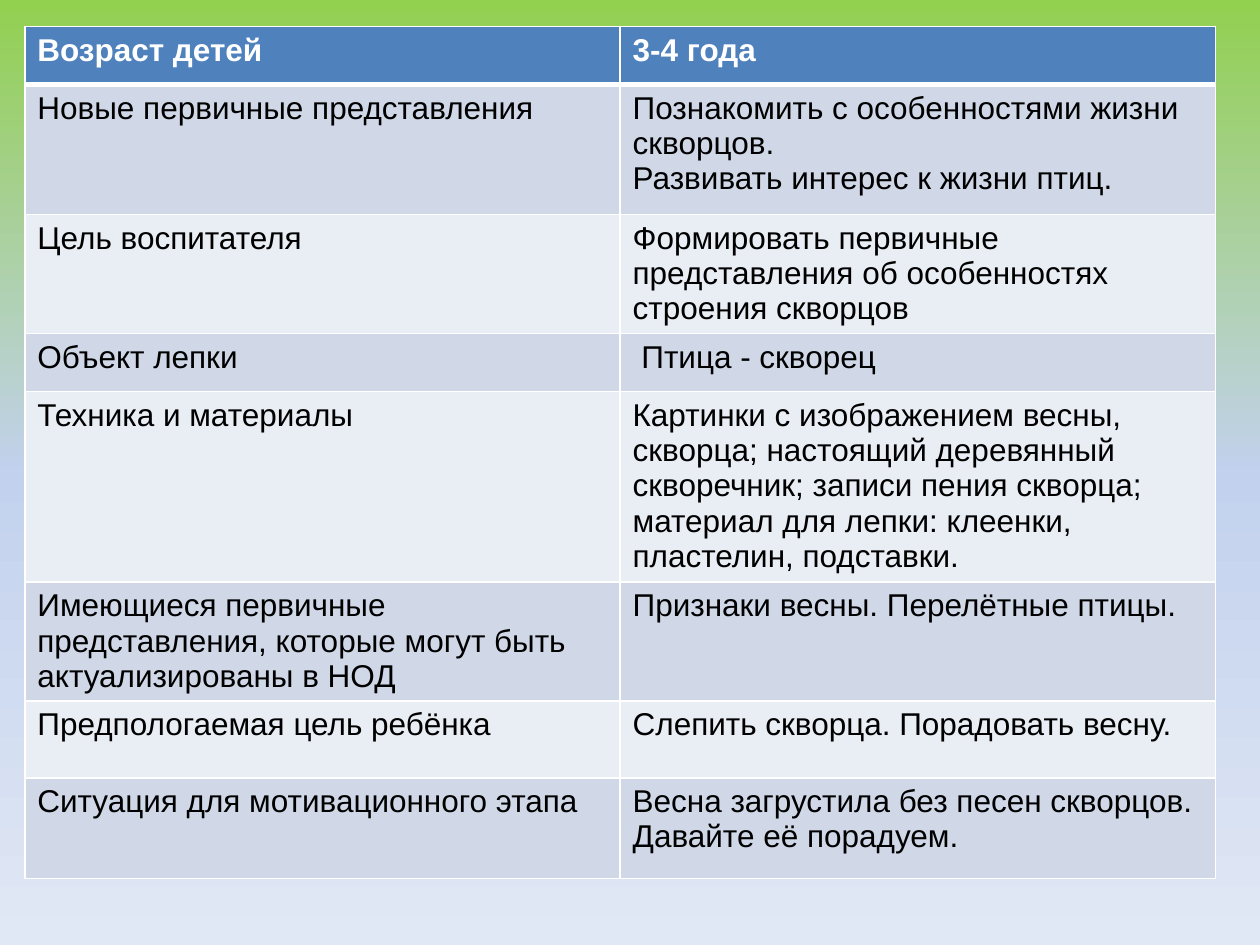
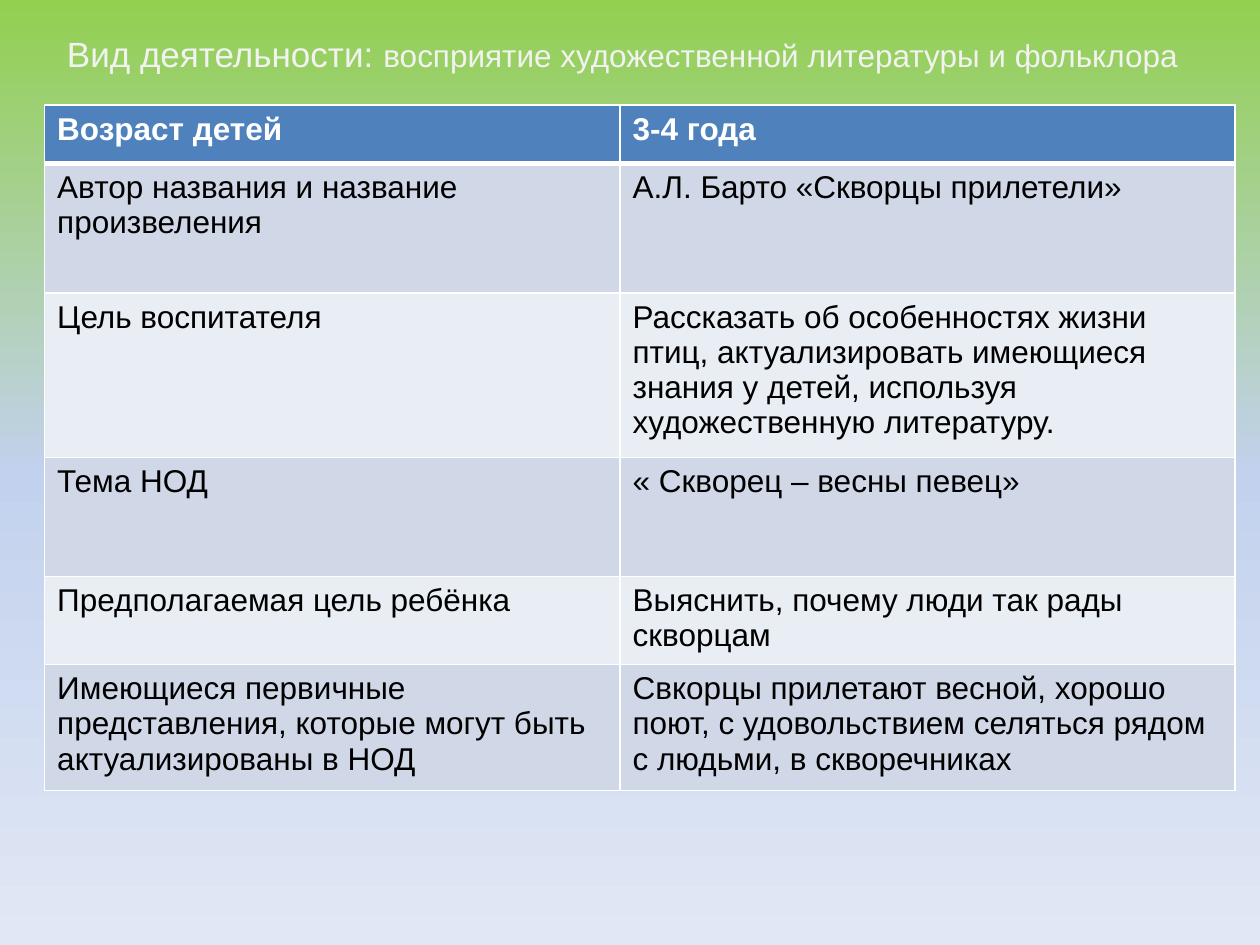
from copy import deepcopy
from dataclasses import dataclass

from lxml.etree import SubElement as Sub
from pptx import Presentation
from pptx.dml.color import RGBColor as Rgb
from pptx.enum.text import MSO_ANCHOR as Anchor, MSO_AUTO_SIZE as Fit, PP_ALIGN as Align
from pptx.oxml.ns import qn
from pptx.util import Cm, Pt


@dataclass(frozen=True)
class Theme:
    font: str = "Arial"
    sky: tuple = ((0, "92D050"), (0.5, "C2D1ED"), (1, "E1E8F5"))
    head: str = "4F81BD"
    bands: tuple = ("D0D8E8", "E9EDF4")
    ink: str = "000000"
    white: str = "FFFFFF"
    pale: str = "F2F2F2"
    text: int = 18
    lead: int = 20
    thin: int = 1
    thick: int = 3


class Deck:
    def __init__(self, theme):
        self.theme = theme
        self.show = Presentation()
        self.show.slide_width, self.show.slide_height = Cm(25.4), Cm(19.05)
        self.slide = None
        self.paint()

    def paint(self):
        """Put the shared gradient on the master."""
        master = self.show.slide_master
        fill = master.background.fill
        fill.gradient()
        fill.gradient_angle = 270
        stops = master.element.find(".//" + qn("a:gsLst"))
        stops.append(deepcopy(stops[-1]))
        for stop, (place, tint) in zip(fill.gradient_stops, self.theme.sky):
            stop.position = place
            stop.color.rgb = Rgb.from_string(tint)

    def add(self, layout):
        self.slide = self.show.slides.add_slide(self.show.slide_layouts[layout])

    def run(self, para, text, size, tint, bold=False):
        run = para.add_run()
        run.text = text
        font = run.font
        font.name, font.size, font.bold = self.theme.font, Pt(size), bold
        font.color.rgb = Rgb.from_string(tint)

    def title(self, left, top, width, height, parts):
        box = self.slide.shapes.title
        box.left, box.top, box.width, box.height = map(Cm, (left, top, width, height))
        frame = box.text_frame
        frame.word_wrap, frame.auto_size = True, Fit.NONE
        frame.vertical_anchor = Anchor.TOP
        para = frame.paragraphs[0]
        para.alignment = Align.CENTER
        for text, size in parts:
            self.run(para, text, size, self.theme.pale)

    def edge(self, cell, side, width):
        line = Sub(cell._tc.get_or_add_tcPr(), qn("a:ln" + side), w=str(Pt(width)))
        Sub(Sub(line, qn("a:solidFill")), qn("a:srgbClr"), val=self.theme.white)

    def cell(self, cell, row, text):
        theme, top = self.theme, row == 0
        # Borders come before the fill; a thick rule closes the header
        rule = {"L": theme.thin, "R": theme.thin,
                "T": theme.thick if row == 1 else theme.thin,
                "B": theme.thick if top else theme.thin}
        for side, width in rule.items():
            self.edge(cell, side, width)
        cell.fill.solid()
        tint = theme.head if top else theme.bands[(row - 1) % 2]
        cell.fill.fore_color.rgb = Rgb.from_string(tint)
        para = cell.text_frame.paragraphs[0]
        for i, line in enumerate(text.split("\n")):
            if i:
                para.add_line_break()
            self.run(para, line, theme.text, theme.white if top else theme.ink, top)

    def table(self, left, top, cols, rows):
        """Draw rows given as (height, label, text)."""
        high = sum(row[0] for row in rows)
        grid = self.slide.shapes.add_table(
            len(rows), len(cols), Cm(left), Cm(top), Cm(sum(cols)), Cm(high)).table
        for col, width in zip(grid.columns, cols):
            col.width = Cm(width)
        for r, (height, *texts) in enumerate(rows):
            grid.rows[r].height = Cm(height)
            for c, text in enumerate(texts):
                self.cell(grid.cell(r, c), r, text)


HEAD = (1.17, "Возраст детей", "3-4 года")
GOAL = "Цель воспитателя"
KNOWN = "Имеющиеся первичные представления, которые могут быть актуализированы в НОД"

MODEL = [
    HEAD,
    (2.62, "Новые первичные представления",
     "Познакомить с особенностями жизни скворцов.\nРазвивать интерес к жизни птиц."),
    (2.4, GOAL,
     "Формировать первичные представления об особенностях строения скворцов"),
    (1.17, "Объект лепки", " Птица - скворец"),
    (3.84, "Техника и материалы",
     "Картинки с изображением весны, скворца; настоящий деревянный скворечник; "
     "записи пения скворца; материал для лепки: клеенки, пластелин, подставки."),
    (2.4, KNOWN, "Признаки весны. Перелётные птицы."),
    (1.55, "Предпологаемая цель ребёнка", "Слепить скворца. Порадовать весну."),
    (2.03, "Ситуация для мотивационного этапа",
     "Весна загрустила без песен скворцов. Давайте её порадуем."),
]

READ = [
    HEAD,
    (2.62, "Автор названия и название произвеления", "А.Л. Барто «Скворцы прилетели»"),
    (3.31, GOAL,
     "Рассказать об особенностях жизни птиц, актуализировать имеющиеся знания "
     "у детей, используя художественную литературу."),
    (2.4, "Тема НОД", "« Скворец – весны певец»"),
    (1.78, "Предполагаемая цель ребёнка", "Выяснить, почему люди так рады скворцам"),
    (2.54, KNOWN,
     "Свкорцы прилетают весной, хорошо поют, с удовольствием селяться рядом "
     "с людьми, в скворечниках"),
]


def main():
    theme = Theme()
    deck = Deck(theme)

    # Modelling lesson
    deck.add(6)
    deck.table(0.5, 0.53, (12, 12), MODEL)

    # Reading lesson
    deck.add(5)
    deck.title(0, 0.53, 25.1, 1.12, (
        ("Вид деятельности: ", theme.lead),
        ("восприятие художественной литературы и фольклора", theme.text)))
    deck.table(0.9, 2.12, (11.6, 12.4), READ)

    deck.show.save("out.pptx")


if __name__ == "__main__":
    main()
